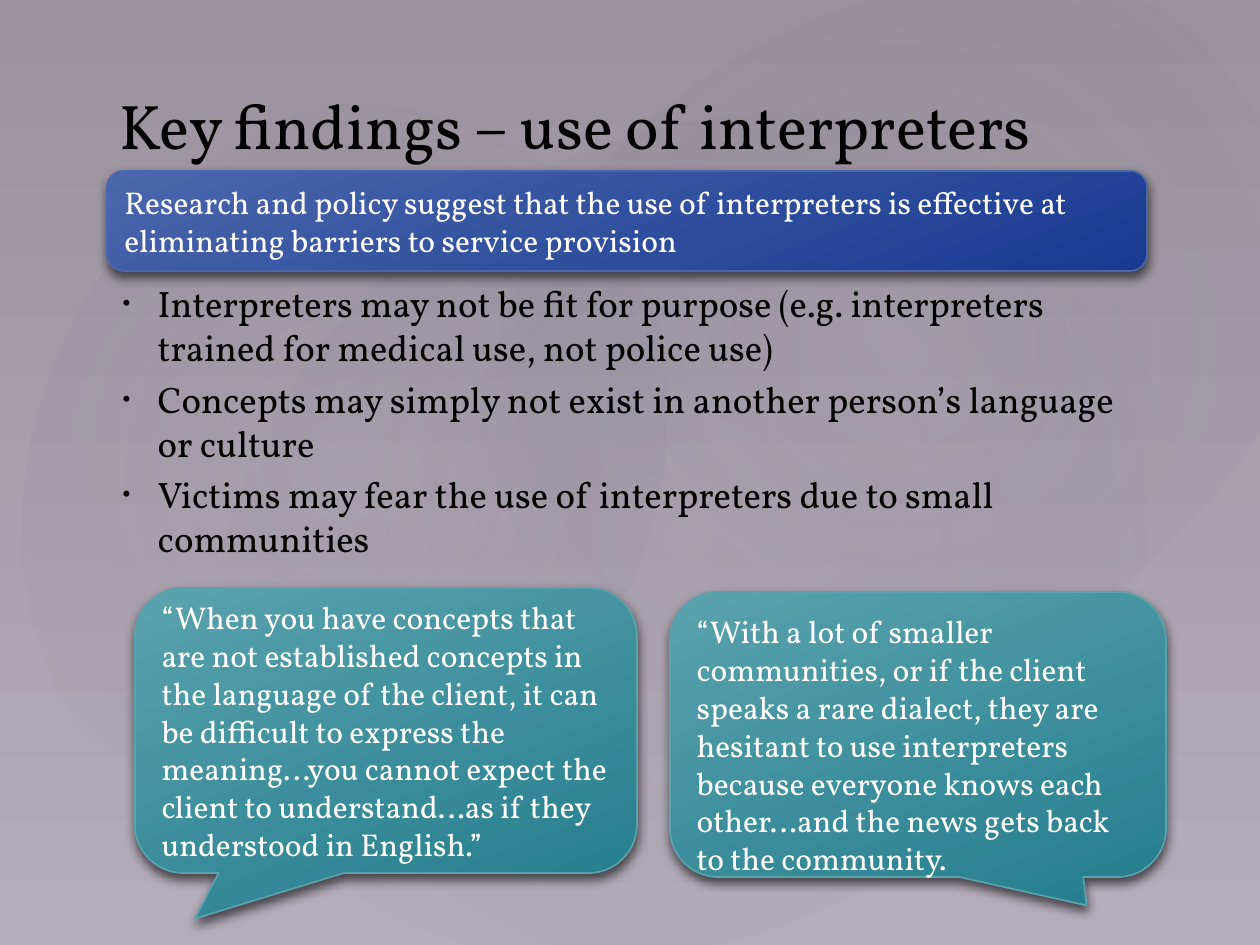
"""Builds the slide on key findings about the use of interpreters."""
import lxml.etree
import pptx
import pptx.dml.color
import pptx.enum.shapes
import pptx.enum.text
import pptx.oxml
import pptx.oxml.ns
import pptx.util

RGB = pptx.dml.color.RGBColor
KIND = pptx.enum.shapes.MSO_SHAPE
ANCHOR = pptx.enum.text.MSO_ANCHOR
LEFT = pptx.enum.text.PP_ALIGN.LEFT
NS = pptx.oxml.ns.nsdecls("a")
FONT = "Vollkorn"
SCALE = 914400 / 126

BLACK, WHITE = RGB(0, 0, 0), RGB(255, 255, 255)
DUSK, MIST = RGB(0x9A, 0x92, 0x9C), RGB(0xB4, 0xAD, 0xBA)
PALE, NAVY = RGB(0xC4, 0xBC, 0xC6), RGB(0x24, 0x28, 0x52)
BLUE = (RGB(0x4A, 0x66, 0xAC), RGB(0x18, 0x3A, 0x90))
TEAL = (RGB(0x5A, 0xA2, 0xAE), RGB(0x27, 0x7F, 0x8E))

TITLE = "Key findings – use of interpreters"
POINTS = [
    "Interpreters may not be fit for purpose (e.g. interpreters trained for medical use, not police use)",
    "Concepts may simply not exist in another person’s language or culture",
    "Victims may fear the use of interpreters due to small communities",
]
CLAIM = "Research and policy suggest that the use of interpreters is effective at eliminating barriers to service provision"
QUOTES = [
    "“When you have concepts that are not established concepts in the language of the client, it can be difficult to express the meaning…you cannot expect the client to understand…as if they understood in English.”",
    "“With a lot of smaller communities, or if the client speaks a rare dialect, they are hesitant to use interpreters because everyone knows each other…and the news gets back to the community.",
]
PANELS = [
    (KIND.FLOWCHART_ALTERNATE_PROCESS, (107, 171, 1040, 100), (), BLUE, ANCHOR.MIDDLE, CLAIM),
    (KIND.ROUNDED_RECTANGULAR_CALLOUT, (135, 588, 502, 285), (-0.38, 0.66, 0.17), TEAL, ANCHOR.MIDDLE, QUOTES[0]),
    (KIND.ROUNDED_RECTANGULAR_CALLOUT, (670, 592, 496, 285), (0.34, 0.6, 0.17), TEAL, ANCHOR.TOP, QUOTES[1]),
]
GLOWS = [
    ((189, 144, 998, 786), 328.7, 7),
    ((-38, 161, 764, 617), 294.3, 8),
    ((451, 16, 893, 655), 328.7, 8),
]


def px(size):
    return pptx.util.Emu(round(size * SCALE))


def place(shape, box):
    shape.left, shape.top, shape.width, shape.height = map(px, box)


def blend(fill, tones, angle):
    fill.gradient()
    fill.gradient_angle = 360 - angle
    for stop, tone in zip(fill.gradient_stops, tones):
        stop.color.rgb = tone


def write(par, text, size, tone):
    par.alignment = LEFT
    run = par.add_run()
    run.text = text
    run.font.name = FONT
    run.font.size = pptx.util.Pt(size)
    run.font.color.rgb = tone


def set_frame(frame, anchor):
    frame.word_wrap = True
    frame.auto_size = pptx.enum.text.MSO_AUTO_SIZE.NONE
    frame.vertical_anchor = anchor


def add_glow(tree, slide, box, turn, alpha, rank):
    glow = slide.shapes.add_shape(KIND.OVAL, *map(px, box))
    glow.rotation = turn
    glow.shadow.inherit = False
    glow.line.fill.background()
    glow.fill.background()
    props = glow.element.spPr
    blank = props.find(pptx.oxml.ns.qn("a:noFill"))
    props.replace(blank, pptx.oxml.parse_xml(
        f'<a:gradFill {NS} rotWithShape="1"><a:gsLst>'
        f'<a:gs pos="0"><a:srgbClr val="{PALE}"><a:alpha val="{alpha * 1000}"/></a:srgbClr></a:gs>'
        f'<a:gs pos="58000"><a:srgbClr val="{NAVY}"><a:alpha val="0"/></a:srgbClr></a:gs>'
        '</a:gsLst><a:path path="circle">'
        '<a:fillToRect l="50000" t="50000" r="50000" b="50000"/></a:path></a:gradFill>'))
    tree.insert(2 + rank, glow.element)


def add_panel(slide, kind, box, bends, tones, anchor, text):
    panel = slide.shapes.add_shape(kind, *map(px, box))
    for spot, bend in enumerate(bends):
        panel.adjustments[spot] = bend
    blend(panel.fill, tones, 69)
    panel.line.color.rgb = tones[0]
    panel.line.width = pptx.util.Pt(1)
    panel.shadow.inherit = False
    shade = panel.element.spPr.find(pptx.oxml.ns.qn("a:effectLst"))
    shade.append(pptx.oxml.parse_xml(
        f'<a:outerShdw {NS} blurRad="76200" dist="38100" dir="5400000" rotWithShape="0">'
        '<a:srgbClr val="000000"><a:alpha val="60000"/></a:srgbClr></a:outerShdw>'))
    set_frame(panel.text_frame, anchor)
    write(panel.text_frame.paragraphs[0], text, 18, WHITE)


def add_points(body):
    place(body, (107, 310, 1040, 272))
    frame = body.text_frame
    set_frame(frame, ANCHOR.MIDDLE)
    frame.margin_bottom = px(57)
    for rank, text in enumerate(POINTS):
        par = frame.add_paragraph() if rank else frame.paragraphs[0]
        write(par, text, 21, BLACK)
        props = par._p.get_or_add_pPr()
        props.set("marL", str(px(38)))
        props.set("indent", str(px(-35)))
        size = lxml.etree.SubElement(props, pptx.oxml.ns.qn("a:buSzPct"))
        size.set("val", "60000")


def main():
    deck = pptx.Presentation()
    deck.slide_width, deck.slide_height = px(1260), px(945)
    slide = deck.slides.add_slide(deck.slide_layouts[1])
    blend(slide.background.fill, (DUSK, MIST), 90)
    title, body = slide.placeholders
    for rank, (box, turn, alpha) in enumerate(GLOWS):
        add_glow(title.element.getparent(), slide, box, turn, alpha, rank)
    place(title, (107, 72, 1040, 96))
    set_frame(title.text_frame, ANCHOR.BOTTOM)
    write(title.text_frame.paragraphs[0], TITLE, 36, BLACK)
    add_points(body)
    for panel in PANELS:
        add_panel(slide, *panel)
    deck.save("out.pptx")


if __name__ == "__main__":
    main()
